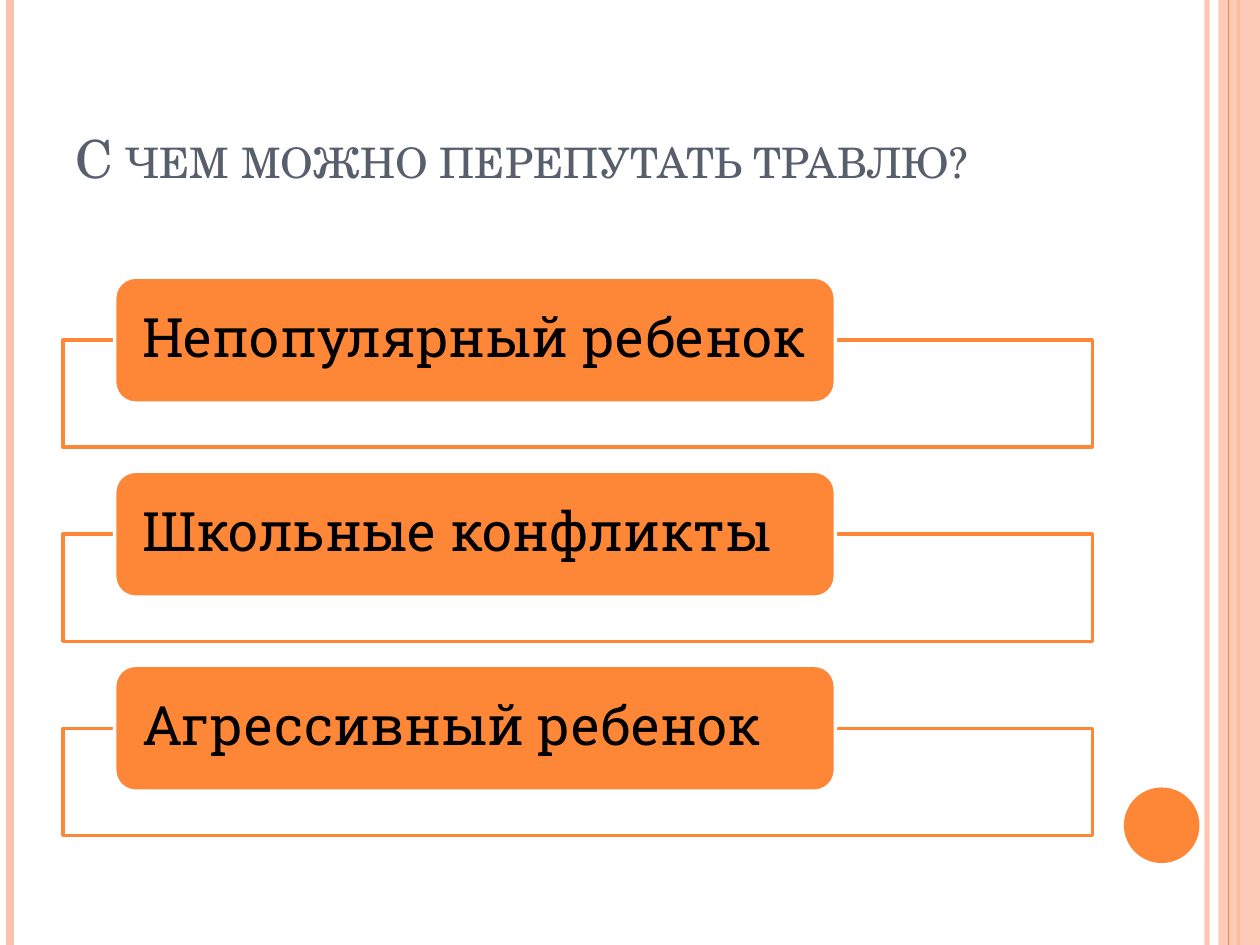
from dataclasses import dataclass

from lxml.etree import SubElement
from pptx import Presentation
from pptx.dml.color import RGBColor
from pptx.enum.shapes import MSO_CONNECTOR, MSO_SHAPE
from pptx.enum.text import MSO_ANCHOR, MSO_AUTO_SIZE, PP_ALIGN
from pptx.oxml.ns import qn
from pptx.util import Inches, Pt


@dataclass(frozen=True)
class Theme:
    accent: RGBColor = RGBColor(0xFE, 0x86, 0x37)
    pale: RGBColor = RGBColor(0xFE, 0xC3, 0xAE)
    white: RGBColor = RGBColor(0xFF, 0xFF, 0xFF)
    heading: RGBColor = RGBColor(0x57, 0x5F, 0x6D)
    ink: RGBColor = RGBColor(0, 0, 0)
    title_font: str = "TeX Gyre Schola"
    label_font: str = "Roboto Slab"
    title_size: int = 30
    label_size: int = 31


THEME = Theme()
WIDTH, HEIGHT = 10, 7.5
LEFT, CONTENT_WIDTH = 0.5, 8.17
FIRST_LABEL_TOP, ROW_STEP = 2.2, 1.54
TOPICS = ["Непопулярный ребенок", "Школьные конфликты", "Агрессивный ребенок"]


def set_opacity(element, percent):
    color = next(element.iter(qn("a:srgbClr")))
    SubElement(color, qn("a:alpha")).set("val", str(percent * 1000))


def add_stripe(page, x, color, width, opacity=100):
    stripe = page.shapes.add_connector(
        MSO_CONNECTOR.STRAIGHT, Inches(x), 0, Inches(x), Inches(HEIGHT))
    stripe.line.color.rgb = color
    stripe.line.width = Pt(width)
    properties = stripe._element.spPr
    if opacity < 100:
        set_opacity(properties, opacity)
    SubElement(properties, qn("a:effectLst"))


def add_block(page, kind, left, top, width, height, fill, outline=None, opacity=100):
    block = page.shapes.add_shape(
        kind, Inches(left), Inches(top), Inches(width), Inches(height))
    block.shadow.inherit = False
    block.fill.solid()
    block.fill.fore_color.rgb = fill
    if opacity < 100:
        set_opacity(block._element.spPr, opacity)
    if outline is None:
        block.line.fill.background()
    else:
        block.line.color.rgb = outline
        block.line.width = Pt(2)
    return block


def style_text(para, font_name, size, color):
    para.alignment = PP_ALIGN.LEFT
    for span in para.runs:
        span.font.name = font_name
        span.font.size = Pt(size)
        span.font.color.rgb = color


def add_decoration(page):
    add_stripe(page, 9.58, THEME.pale, 3, opacity=93)
    add_stripe(page, 0.08, THEME.pale, 4.5)
    add_stripe(page, 9.83, THEME.accent, 1.5)
    add_block(page, MSO_SHAPE.RECTANGLE, 9.67, 0, WIDTH - 9.67, HEIGHT,
              THEME.pale, opacity=87)
    add_stripe(page, 9.75, THEME.accent, 0.75)
    add_block(page, MSO_SHAPE.OVAL, 8.92, 6.25, 0.6, 0.6, THEME.accent)


def set_title(page, text):
    title = page.shapes.title
    title.left, title.top = Inches(LEFT), Inches(0.3)
    title.width, title.height = Inches(CONTENT_WIDTH), Inches(1.25)
    frame = title.text_frame
    frame.text = text
    frame.auto_size = MSO_AUTO_SIZE.NONE
    frame.vertical_anchor = MSO_ANCHOR.BOTTOM
    para = frame.paragraphs[0]
    style_text(para, THEME.title_font, THEME.title_size, THEME.heading)
    para.runs[0]._r.get_or_add_rPr().set("cap", "small")


def add_topic(page, text, top):
    add_block(page, MSO_SHAPE.RECTANGLE, LEFT, top + 0.5, CONTENT_WIDTH, 0.85,
              THEME.white, THEME.accent, opacity=90)
    label = add_block(page, MSO_SHAPE.ROUNDED_RECTANGLE, LEFT + 0.41, top, 5.72, 1,
                      THEME.accent, THEME.white)
    frame = label.text_frame
    frame.text = text
    frame.word_wrap = True
    frame.vertical_anchor = MSO_ANCHOR.MIDDLE
    frame.margin_left = frame.margin_right = Inches(0.17)
    frame.margin_top = frame.margin_bottom = 0
    para = frame.paragraphs[0]
    para.line_spacing = 0.9
    style_text(para, THEME.label_font, THEME.label_size, THEME.ink)


def main():
    deck = Presentation()
    deck.slide_width, deck.slide_height = Inches(WIDTH), Inches(HEIGHT)
    page = deck.slides.add_slide(deck.slide_layouts[5])
    add_decoration(page)
    set_title(page, "С чем можно перепутать травлю?")
    for row, topic in enumerate(TOPICS):
        add_topic(page, topic, FIRST_LABEL_TOP + row * ROW_STEP)
    deck.save("out.pptx")


if __name__ == "__main__":
    main()
